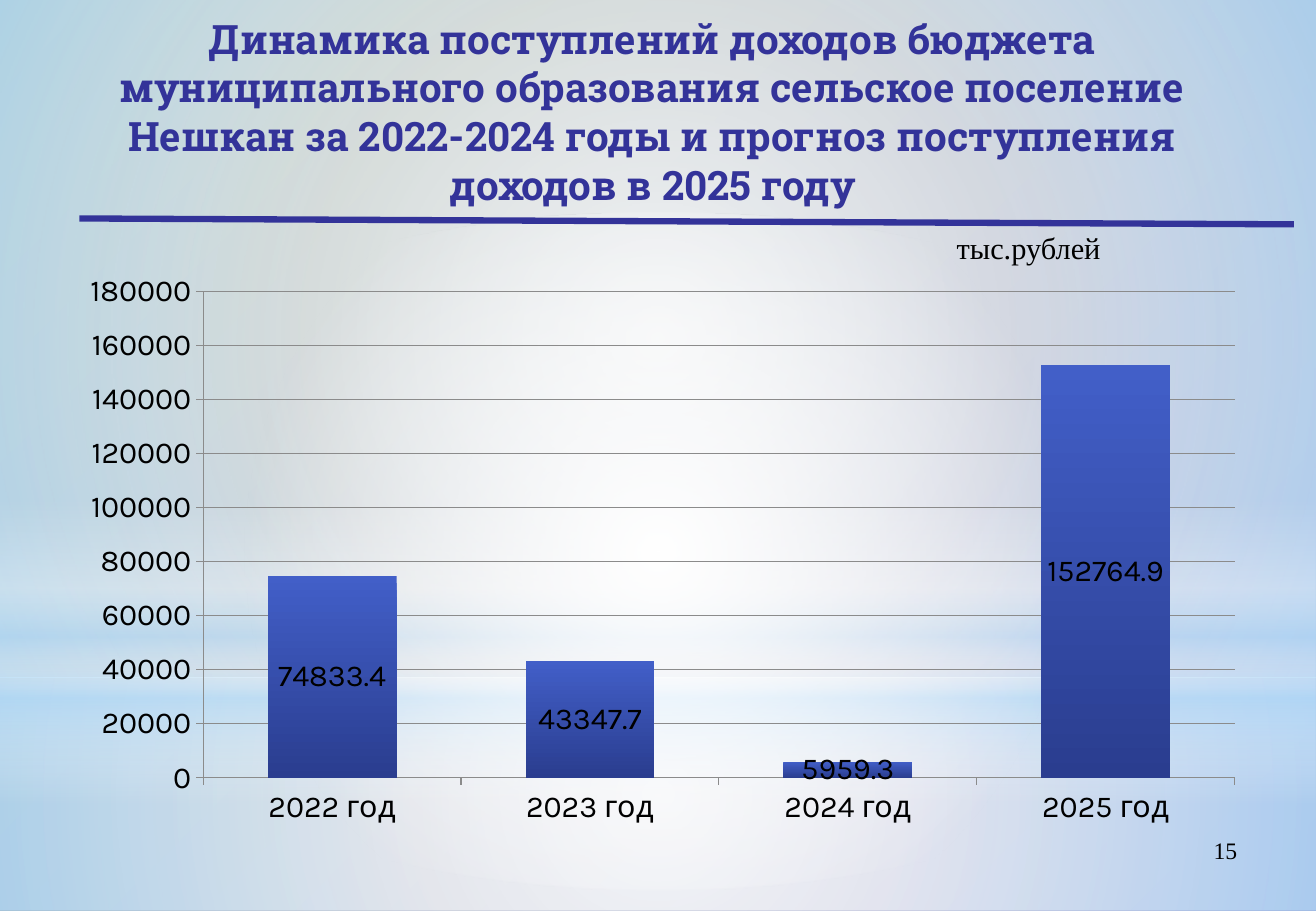
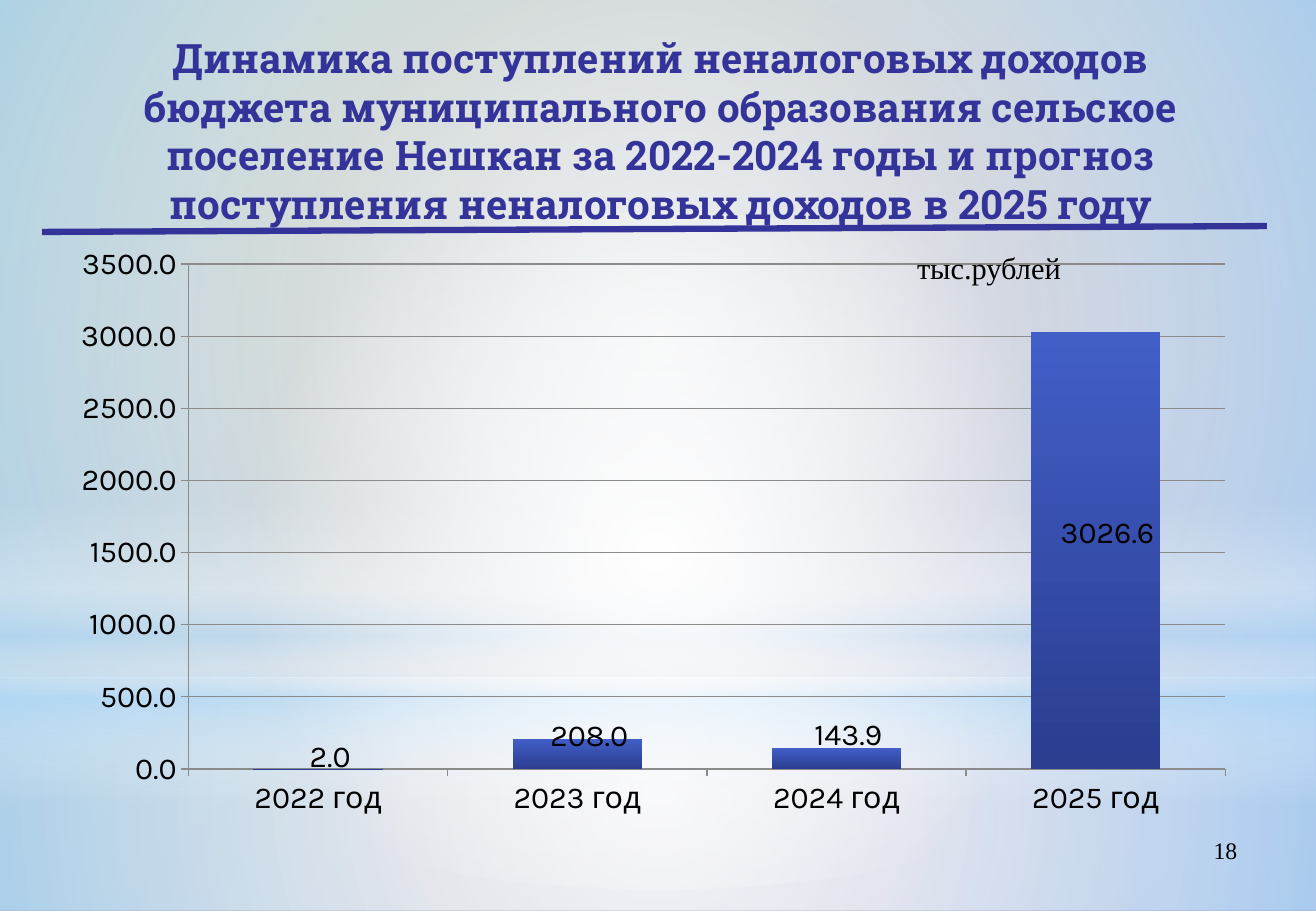
"""Build two slides on the revenue of a rural settlement's budget."""
from lxml.etree import SubElement as Sub
from pptx import Presentation
from pptx.chart.data import CategoryChartData
from pptx.dml.color import RGBColor as RGB
from pptx.enum.chart import XL_CHART_TYPE as CT, XL_LABEL_POSITION as LP, XL_TICK_MARK as TM
from pptx.enum.shapes import MSO_CONNECTOR as MC, MSO_SHAPE as MS
from pptx.enum.text import MSO_ANCHOR as MA, PP_ALIGN as PA
from pptx.oxml.ns import qn
from pptx.util import Pt


class Theme:
    title = dict(name="Roboto Slab", size=Pt(24), bold=True)
    unit = dict(name="Times New Roman", size=Pt(18))
    number = dict(name="Times New Roman", size=Pt(14))
    chart = dict(name="Karla", size=Pt(18))
    navy, black, grid = RGB(0x33, 0x33, 0x99), RGB(0, 0, 0), RGB(0x8B, 0x8B, 0x8B)
    rule, hairline = Pt(3.75), Pt(0.75)
    bg = [(0, "96AB94", 100), (100, "8488C4", 100)]
    bar = [(0, "425FC8", 100), (100, "2A3D8F", 100)]
    floor = [(0, "FFFFFF", 91), (37, "FFFFFF", 76), (100, "B4DCFA", 79)]
    sky = [(0, "FFFFFF", 89), (48, "FFFFFF", 62), (100, "B4DCFA", 79)]
    horizon = [(0, "FFFFFF", 0), (29, "FFFFFF", 30), (45, "B4DCFA", 40),
               (55, "FFFFFF", 26), (65, "B4DCFA", 60), (100, "FFFFFF", 0)]
    glow = [(0, "FFFFFF", 100), (56, "FFFFFF", 0)]


def gradient(fill, root, stops, angle=None):
    """Fill with (position, colour, opacity) stops; radial when no angle is given."""
    fill.gradient()
    g = next(root.iter(qn("a:gradFill")))
    for child in list(g):
        g.remove(child)
    gs_list = Sub(g, qn("a:gsLst"))
    for pos, color, alpha in stops:
        gs = Sub(gs_list, qn("a:gs"), pos=str(pos * 1000))
        clr = Sub(gs, qn("a:srgbClr"), val=color)
        Sub(clr, qn("a:alpha"), val=str(alpha * 1000))
    if angle is None:
        radial = Sub(g, qn("a:path"), path="circle")
        Sub(radial, qn("a:fillToRect"), dict.fromkeys("ltrb", "50000"))
    else:
        Sub(g, qn("a:lin"), ang=str(angle * 60000), scaled="0")


def add_text(s, box, text, fmt, color, align=PA.LEFT, wrap=True, anchor=MA.TOP):
    """Add a one-paragraph text box."""
    tf = s.shapes.add_textbox(*map(Pt, box)).text_frame
    tf.word_wrap, tf.vertical_anchor = wrap, anchor
    p = tf.paragraphs[0]
    p.alignment = align
    r = p.add_run()
    r.text = text
    for key, value in fmt.items():
        setattr(r.font, key, value)
    r.font.color.rgb = color


YEARS = [f"{year} год" for year in range(2022, 2026)]
SLIDES = [
    dict(title="Динамика поступлений доходов бюджета муниципального образования сельское "
               "поселение Нешкан за 2022-2024 годы и прогноз поступления доходов в 2025 году",
         title_at=(35.5, 16.5), rule=(47, 129.5, 767, 133), unit_at=(560, 132.5),
         chart=(39.5, 155.5, 706.5, 340.5), values=(74833.4, 43347.7, 5959.3, 152764.9),
         fmt="General", top=180000, step=20000, shifts=(), number="15"),
    dict(title="Динамика поступлений неналоговых доходов бюджета муниципального образования "
               "сельское поселение Нешкан за 2022-2024 годы и прогноз поступления "
               "неналоговых доходов в 2025 году",
         title_at=(40.5, 28), rule=(25, 137.5, 751, 134), unit_at=(536.5, 144),
         chart=(34, 139, 706.5, 352), values=(2, 208, 143.9, 3026.6),
         fmt="0.0", top=3500, step=500,
         shifts=((0.01, -0.02), (0.01, -0.03), (0.01, -0.04), (0.01, -0.03)), number="18"),
]

prs = Presentation()
prs.slide_width, prs.slide_height = Pt(780.12), Pt(540)
blank = prs.slide_layouts[6]
slides = [prs.slides.add_slide(blank) for _ in SLIDES]

master = prs.slide_master
gradient(master.background.fill, master.element, Theme.bg, 45)
backdrop = [
    (MS.RECTANGLE, 401.8, 138.2, Theme.floor, None),
    (MS.RECTANGLE, 0, 401.8, Theme.sky, None),
    (MS.RECTANGLE, 296.5, 180, Theme.horizon, 90),
    (MS.OVAL, 126, 401.8, Theme.glow, None),
]
for i, (kind, top, height, stops, angle) in enumerate(backdrop):
    sp = slides[0].shapes.add_shape(kind, 0, Pt(top), prs.slide_width, Pt(height))
    sp.shadow.inherit = False
    sp.line.fill.background()
    gradient(sp.fill, sp.element, stops, angle)
    sp.element.nvSpPr.cNvPr.set("id", str(101 + i))
    master.shapes.element.insert(2 + i, sp.element)

for s, d in zip(slides, SLIDES):
    add_text(s, (558.5, 492, 182, 37.5), d["number"], Theme.number, Theme.black, PA.RIGHT)
    add_text(s, (*d["title_at"], 702, 98.5), d["title"], Theme.title, Theme.navy,
             PA.CENTER, anchor=MA.MIDDLE)

    rule = s.shapes.add_connector(MC.STRAIGHT, *map(Pt, d["rule"]))
    rule.line.color.rgb, rule.line.width = Theme.navy, Theme.rule
    Sub(rule.element.spPr, qn("a:effectLst"))

    data = CategoryChartData(number_format=d["fmt"])
    data.categories = YEARS
    data.add_series("Series 1", d["values"])
    chart = s.shapes.add_chart(CT.COLUMN_STACKED, *map(Pt, d["chart"]), data).chart
    chart.has_legend = chart.has_title = False
    plot, series = chart.plots[0], chart.series[0]
    plot.gap_width, plot.overlap, plot.vary_by_categories = 100, 100, False
    gradient(series.format.fill, chart.element, Theme.bar, 90)

    labels = series.data_labels
    labels.show_value, labels.position = True, LP.CENTER
    labels.number_format, labels.number_format_is_linked = d["fmt"], False
    point_labels = [series.points[i].data_label for i in range(len(d["shifts"]))]
    for label in point_labels:
        label.position = LP.CENTER
    for font in [chart.font, labels.font, *(label.font for label in point_labels)]:
        for key, value in Theme.chart.items():
            setattr(font, key, value)
        font.color.rgb = Theme.black
    for lbl, shift in zip(chart.element.iter(qn("c:dLbl")), d["shifts"]):
        layout = Sub(lbl, qn("c:layout"))
        manual = Sub(layout, qn("c:manualLayout"))
        for axis, value in zip("xy", shift):
            Sub(manual, qn(f"c:{axis}"), val=str(value))
        lbl.insert(1, layout)

    value_axis = chart.value_axis
    value_axis.minimum_scale, value_axis.maximum_scale = 0, d["top"]
    value_axis.major_unit = d["step"]
    value_axis.has_major_gridlines = True
    value_axis.tick_labels.number_format = d["fmt"]
    value_axis.tick_labels.number_format_is_linked = False
    for axis in (chart.category_axis, value_axis):
        axis.major_tick_mark = TM.OUTSIDE
    for part in (chart.category_axis, value_axis, value_axis.major_gridlines):
        part.format.line.color.rgb, part.format.line.width = Theme.grid, Theme.hairline

    add_text(s, (*d["unit_at"], 101, 29), "тыс.рублей", Theme.unit, Theme.black, wrap=False)

prs.save("out.pptx")
